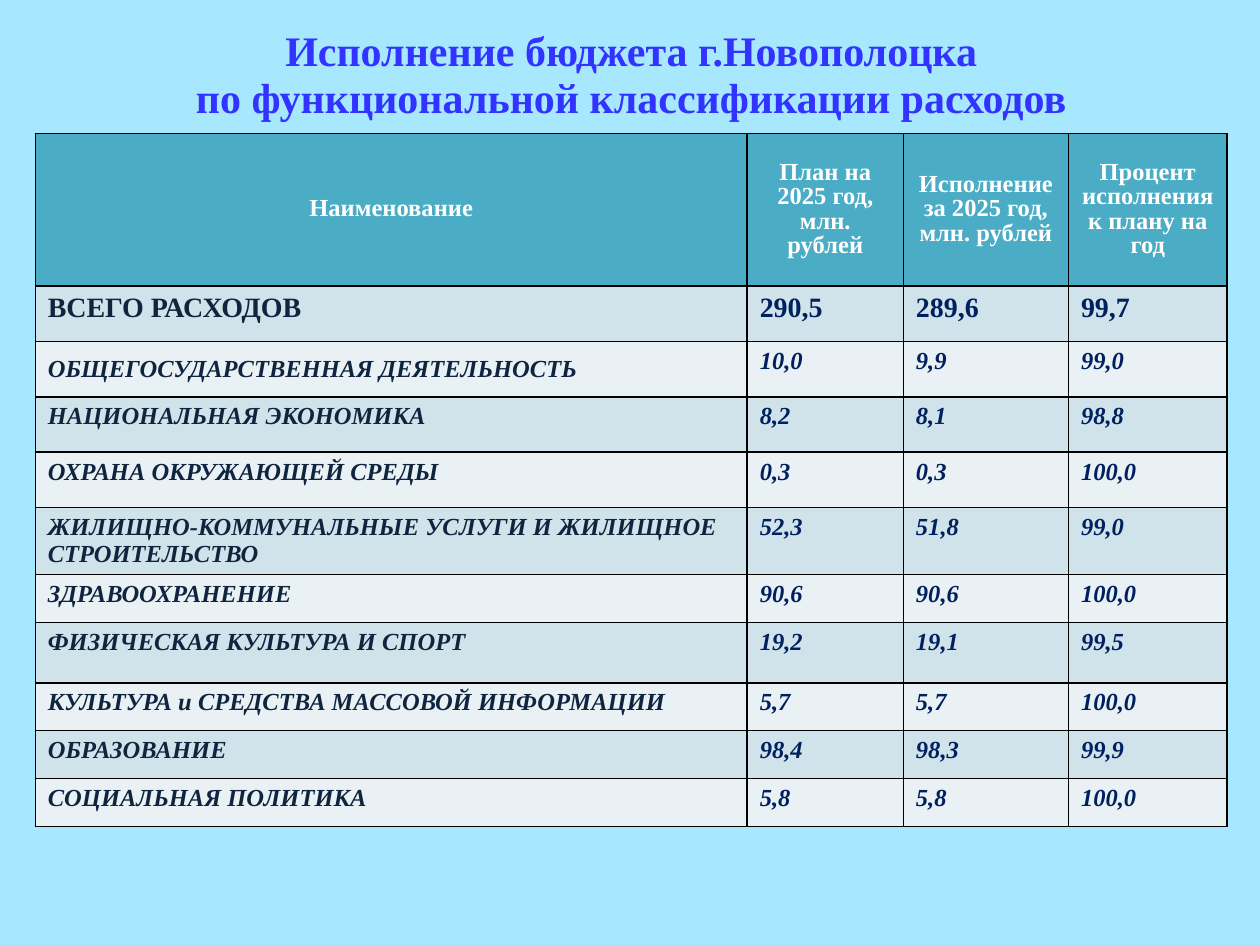
from dataclasses import dataclass

from lxml.etree import SubElement
from pptx import Presentation
from pptx.dml.color import RGBColor
from pptx.enum.text import MSO_ANCHOR, MSO_AUTO_SIZE, PP_ALIGN
from pptx.oxml.ns import qn
from pptx.util import Inches, Pt


@dataclass(frozen=True)
class Theme:
    font: str = "Times New Roman"
    background: str = "A7E8FF"
    title: str = "3333FF"
    header_fill: str = "4BACC6"
    header_text: str = "FFFFFF"
    bands: tuple = ("D0E3EA", "E9F1F5")
    name_text: str = "0F243E"
    value_text: str = "002060"
    border: str = "000000"
    title_size: int = 24
    total_size: int = 16
    table_size: int = 14


THEME = Theme()

TITLE = "Исполнение бюджета г.Новополоцка\vпо функциональной классификации расходов"
HEADERS = (
    "Наименование",
    "План на 2025 год, млн. рублей",
    "Исполнение за 2025 год, млн. рублей",
    "Процент исполнения к плану на год",
)
EXPENSES = (
    ("ВСЕГО РАСХОДОВ", "290,5", "289,6", "99,7"),
    ("ОБЩЕГОСУДАРСТВЕННАЯ ДЕЯТЕЛЬНОСТЬ", "10,0", "9,9", "99,0"),
    ("НАЦИОНАЛЬНАЯ ЭКОНОМИКА", "8,2", "8,1", "98,8"),
    ("ОХРАНА ОКРУЖАЮЩЕЙ СРЕДЫ", "0,3", "0,3", "100,0"),
    ("ЖИЛИЩНО-КОММУНАЛЬНЫЕ УСЛУГИ И ЖИЛИЩНОЕ СТРОИТЕЛЬСТВО", "52,3", "51,8", "99,0"),
    ("ЗДРАВООХРАНЕНИЕ", "90,6", "90,6", "100,0"),
    ("ФИЗИЧЕСКАЯ КУЛЬТУРА И СПОРТ", "19,2", "19,1", "99,5"),
    ("КУЛЬТУРА и СРЕДСТВА МАССОВОЙ ИНФОРМАЦИИ", "5,7", "5,7", "100,0"),
    ("ОБРАЗОВАНИЕ", "98,4", "98,3", "99,9"),
    ("СОЦИАЛЬНАЯ ПОЛИТИКА", "5,8", "5,8", "100,0"),
)
COLUMN_WIDTHS = (5.65, 1.24, 1.31, 1.26)
ROW_HEIGHTS = (1.21, 0.44, 0.44, 0.44, 0.44, 0.53, 0.38, 0.48, 0.38, 0.38, 0.38)


def set_attributes(target, values):
    for name, value in values.items():
        setattr(target, name, value)


def format_paragraph(paragraph, color, size, italic=False, **layout):
    set_attributes(paragraph, layout)
    set_attributes(paragraph.font, {
        "name": THEME.font, "size": Pt(size), "bold": True, "italic": italic,
    })
    for run in paragraph.runs:
        set_attributes(run.font, {
            "name": THEME.font, "size": Pt(size), "bold": True, "italic": italic,
        })
        run.font.color.rgb = RGBColor.from_string(color)


def add_title(slide):
    title = slide.shapes.title
    set_attributes(title, {
        "left": Inches(0.51), "top": Inches(0.13),
        "width": Inches(9), "height": Inches(0.93),
    })
    frame = title.text_frame
    frame.text = TITLE
    set_attributes(frame, {
        "word_wrap": True,
        "auto_size": MSO_AUTO_SIZE.NONE,
        "vertical_anchor": MSO_ANCHOR.MIDDLE,
    })
    format_paragraph(frame.paragraphs[0], THEME.title, THEME.title_size,
                     alignment=PP_ALIGN.CENTER, line_spacing=Pt(27))


def add_borders(cell):
    properties = cell._tc.get_or_add_tcPr()
    for side in ("a:lnL", "a:lnR", "a:lnT", "a:lnB"):
        line = SubElement(properties, qn(side), w=str(Pt(1)))
        fill = SubElement(line, qn("a:solidFill"))
        SubElement(fill, qn("a:srgbClr"), val=THEME.border)


def fill_cell(cell, text, fill, anchor):
    add_borders(cell)
    cell.fill.solid()
    cell.fill.fore_color.rgb = RGBColor.from_string(fill)
    cell.text = text
    cell.vertical_anchor = anchor
    return cell.text_frame.paragraphs[0]


def add_header(table):
    for column, text in enumerate(HEADERS):
        paragraph = fill_cell(table.cell(0, column), text,
                              THEME.header_fill, MSO_ANCHOR.MIDDLE)
        format_paragraph(paragraph, THEME.header_text, THEME.table_size,
                         alignment=PP_ALIGN.CENTER, line_spacing=Pt(14))


def add_expense(table, row, expense):
    is_total = row == 1
    size = THEME.total_size if is_total else THEME.table_size
    for column, text in enumerate(expense):
        centred = row == 2 and column == 0
        paragraph = fill_cell(table.cell(row, column), text,
                              THEME.bands[(row - 1) % 2],
                              MSO_ANCHOR.MIDDLE if centred else MSO_ANCHOR.TOP)
        color = THEME.value_text if column else THEME.name_text
        format_paragraph(paragraph, color, size, italic=not is_total)


def add_budget_table(slide):
    table = slide.shapes.add_table(
        len(ROW_HEIGHTS), len(COLUMN_WIDTHS), Inches(0.28), Inches(1.06),
        Inches(sum(COLUMN_WIDTHS)), Inches(sum(ROW_HEIGHTS)),
    ).table
    for column, width in zip(table.columns, COLUMN_WIDTHS):
        column.width = Inches(width)
    for row, height in zip(table.rows, ROW_HEIGHTS):
        row.height = Inches(height)
    add_header(table)
    for row, expense in enumerate(EXPENSES, start=1):
        add_expense(table, row, expense)


def main():
    presentation = Presentation()
    set_attributes(presentation, {
        "slide_width": Inches(10), "slide_height": Inches(7.5),
    })
    slide = presentation.slides.add_slide(presentation.slide_layouts[5])
    slide.background.fill.solid()
    slide.background.fill.fore_color.rgb = RGBColor.from_string(THEME.background)
    add_title(slide)
    add_budget_table(slide)
    presentation.save("out.pptx")


if __name__ == "__main__":
    main()
